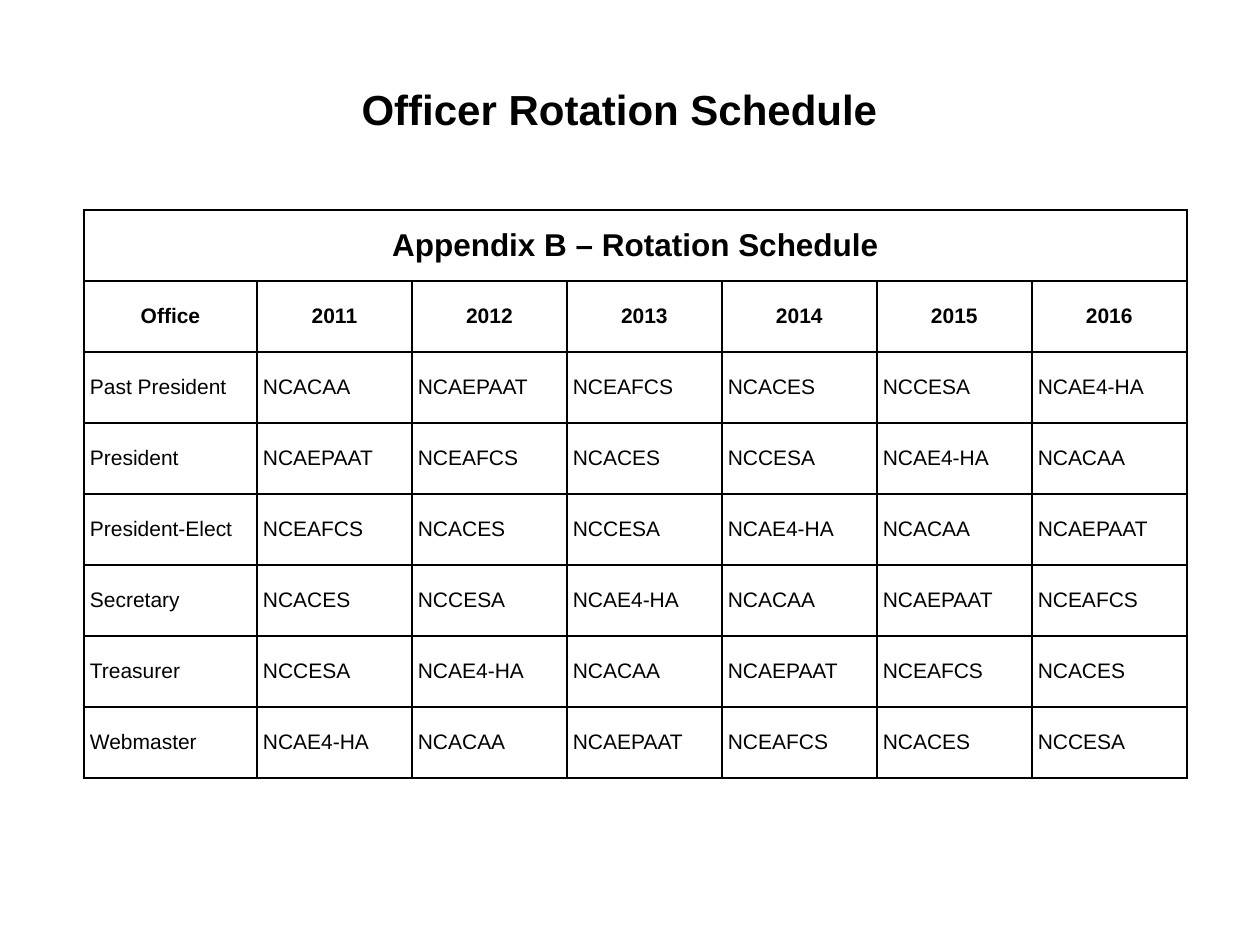
"""Build the officer rotation schedule slide."""
from lxml.etree import SubElement
from pptx import Presentation
from pptx.dml.color import RGBColor
from pptx.enum.text import MSO_ANCHOR, PP_ALIGN
from pptx.oxml.ns import qn
from pptx.util import Pt

PX = 914400 / 126
BLACK = "000000"
OFFICES = ["Past President", "President", "President-Elect", "Secretary", "Treasurer", "Webmaster"]
GROUPS = ["NCACAA", "NCAEPAAT", "NCEAFCS", "NCACES", "NCCESA", "NCAE4-HA"]
YEARS = [str(year) for year in range(2011, 2017)]


def px(n):
    return round(n * PX)


def style(p, size, bold, align):
    p.alignment = align
    p.font.name = "Arial"
    p.font.size = Pt(size)
    p.font.bold = bold
    p.font.color.rgb = RGBColor.from_string(BLACK)


prs = Presentation()
prs.slide_width, prs.slide_height = px(1260), px(945)
s = prs.slides.add_slide(prs.slide_layouts[6])

rows = [["Appendix B – Rotation Schedule"] + [""] * len(YEARS), ["Office"] + YEARS]
for i, office in enumerate(OFFICES):
    rows.append([office] + GROUPS[i:] + GROUPS[:i])

table = s.shapes.add_table(len(rows), len(rows[0]), px(84), px(210), px(1103), px(568)).table
for c, column in enumerate(table.columns):
    column.width = px(155 if c else 173)
for row in table.rows:
    row.height = px(71)
table.cell(0, 0).merge(table.cell(0, len(YEARS)))

for r, row in enumerate(rows):
    for c, text in enumerate(row):
        cell = table.cell(r, c)
        cell.vertical_anchor = MSO_ANCHOR.MIDDLE
        cell.margin_left = cell.margin_right = px(6)
        cell.margin_top = cell.margin_bottom = 0
        for side in ("a:lnL", "a:lnR", "a:lnT", "a:lnB"):
            ln = SubElement(cell._tc.get_or_add_tcPr(), qn(side), w=str(Pt(1.5)))
            SubElement(SubElement(ln, qn("a:solidFill")), qn("a:srgbClr"), val=BLACK)
        cell.fill.background()
        if text:
            p = cell.text_frame.paragraphs[0]
            p.text = text
            style(p, 12 if r else 18, r < 2, PP_ALIGN.CENTER if r < 2 else PP_ALIGN.LEFT)

sp = s.shapes.add_textbox(px(147), px(79), px(945), px(60))
tf = sp.text_frame
tf.word_wrap = True
tf.vertical_anchor = MSO_ANCHOR.MIDDLE
p = tf.paragraphs[0]
p.text = "Officer Rotation Schedule"
style(p, 24, True, PP_ALIGN.CENTER)

prs.save("out.pptx")
